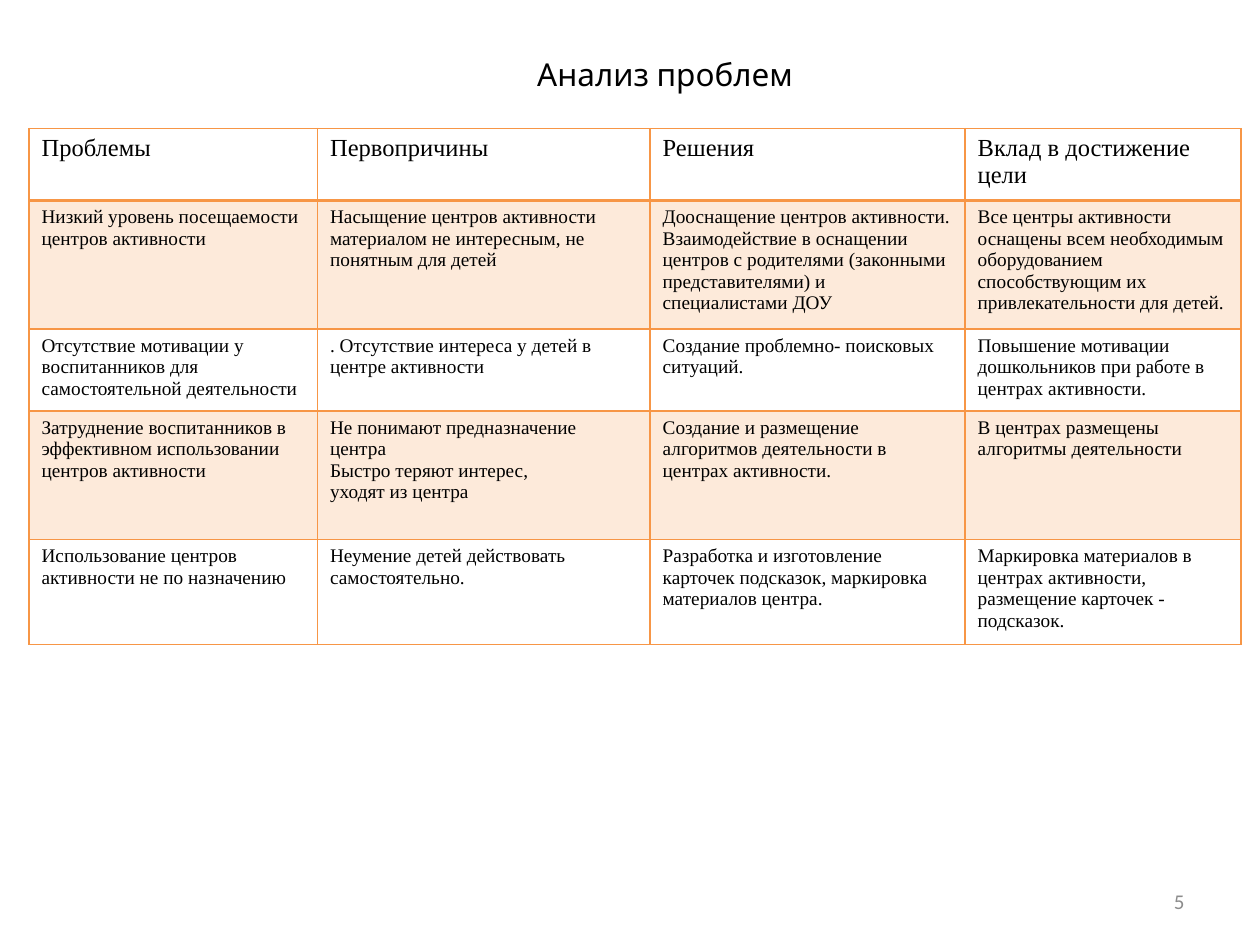
from dataclasses import dataclass

from lxml.etree import SubElement
from pptx import Presentation
from pptx.dml.color import RGBColor
from pptx.enum.text import MSO_ANCHOR, MSO_AUTO_SIZE, PP_ALIGN
from pptx.oxml import parse_xml
from pptx.oxml.ns import nsdecls, qn
from pptx.util import Inches, Pt

# Content: each cell is a list of paragraphs
TITLE = "Анализ проблем"
PAGE = "5"
HEADER = [["Проблемы"], ["Первопричины"], ["Решения"], ["Вклад в достижение цели"]]
PROBLEMS = [
    [["Низкий уровень посещаемости центров активности"],
     ["Насыщение центров активности", "материалом не интересным, не понятным для детей"],
     ["Дооснащение центров активности. Взаимодействие в оснащении центров с родителями "
      "(законными представителями) и специалистами ДОУ"],
     ["Все центры активности оснащены всем необходимым оборудованием способствующим "
      "их привлекательности для детей."]],
    [["Отсутствие мотивации у воспитанников для самостоятельной деятельности"],
     [". Отсутствие интереса у детей в центре активности"],
     ["Создание проблемно- поисковых ситуаций."],
     ["Повышение мотивации дошкольников при работе в центрах активности."]],
    [["Затруднение воспитанников в эффективном использовании центров активности"],
     ["Не понимают предназначение центра", "Быстро теряют интерес,", "уходят из центра"],
     ["Создание и размещение алгоритмов деятельности в центрах активности."],
     ["В центрах размещены алгоритмы деятельности"]],
    [["Использование центров активности не по назначению"],
     ["Неумение детей действовать самостоятельно."],
     ["Разработка и изготовление карточек подсказок, маркировка материалов центра."],
     ["Маркировка материалов в центрах активности, размещение карточек - подсказок."]],
]
COLS = [2.29, 2.64, 2.5, 2.19]
ROWS = [0.57, 1.02, 0.65, 1.02, 0.83]


@dataclass(frozen=True)
class Theme:
    accent: str = "F79646"
    ink: str = "000000"
    muted: str = "8C8C8C"
    title_font: str = "Karla"
    table_font: str = "Times New Roman"
    page_font: str = "Calibri"
    title_size: int = 18
    header_size: int = 14
    body_size: int = 11
    page_size: int = 12
    band_alpha: int = 20
    line: int = 1
    header_line: int = 2


T = Theme()


def write(tf, paragraphs, font, size, color, align=None):
    for i, text in enumerate(paragraphs):
        p = tf.add_paragraph() if i else tf.paragraphs[0]
        p.alignment = align
        r = p.add_run()
        r.text = text
        r.font.name, r.font.size = font, Pt(size)
        r.font.color.rgb = RGBColor.from_string(color)


def place(sp, left, top, width, height):
    sp.left, sp.top, sp.width, sp.height = map(Inches, (left, top, width, height))


def set_borders(cell, top, bottom):
    """Draw all four sides; the lines come before the fill in a:tcPr."""
    sides = [("lnL", T.line), ("lnR", T.line), ("lnT", top), ("lnB", bottom)]
    for i, (tag, width) in enumerate(sides):
        ln = parse_xml(
            f'<a:{tag} {nsdecls("a")} w="{Pt(width)}"><a:solidFill>'
            f'<a:srgbClr val="{T.accent}"/></a:solidFill></a:{tag}>')
        cell._tc.get_or_add_tcPr().insert(i, ln)


def set_band(cell):
    cell.fill.solid()
    cell.fill.fore_color.rgb = RGBColor.from_string(T.accent)
    color = cell._tc.tcPr.find(f'{qn("a:solidFill")}/{qn("a:srgbClr")}')
    SubElement(color, qn("a:alpha"), val=str(T.band_alpha * 1000))


def add_problem_table(s):
    rows = [HEADER] + PROBLEMS
    frame = s.shapes.add_table(len(ROWS), len(COLS), Inches(0.23), Inches(1.02),
                               Inches(sum(COLS)), Inches(sum(ROWS)))
    table = frame.table
    for col, width in zip(table.columns, COLS):
        col.width = Inches(width)
    for row, height in zip(table.rows, ROWS):
        row.height = Inches(height)
    table.first_row = table.horz_banding = False
    for i, row in enumerate(rows):
        for j, paragraphs in enumerate(row):
            cell = table.cell(i, j)
            size = T.body_size if i else T.header_size
            write(cell.text_frame, paragraphs, T.table_font, size, T.ink)
            if i % 2:
                set_band(cell)
            else:
                cell.fill.background()
            set_borders(cell, top=T.header_line if i == 1 else T.line,
                        bottom=T.header_line if i == 0 else T.line)


def main():
    prs = Presentation()
    prs.slide_width, prs.slide_height = Inches(10), Inches(7.5)
    s = prs.slides.add_slide(prs.slide_layouts[5])

    # Title
    title = s.shapes.title
    place(title, 0.86, 0.39, 8.84, 0.4)
    tf = title.text_frame
    tf.word_wrap, tf.auto_size = True, MSO_AUTO_SIZE.SHAPE_TO_FIT_TEXT
    tf.vertical_anchor = MSO_ANCHOR.TOP
    write(tf, [TITLE], T.title_font, T.title_size, T.ink, PP_ALIGN.CENTER)

    # Table of problems
    add_problem_table(s)

    # Page number
    page = s.shapes.add_textbox(0, 0, 0, 0)
    place(page, 7.17, 6.95, 2.33, 0.4)
    tf = page.text_frame
    tf.word_wrap, tf.vertical_anchor = True, MSO_ANCHOR.MIDDLE
    write(tf, [PAGE], T.page_font, T.page_size, T.muted, PP_ALIGN.RIGHT)

    prs.save("out.pptx")


if __name__ == "__main__":
    main()
